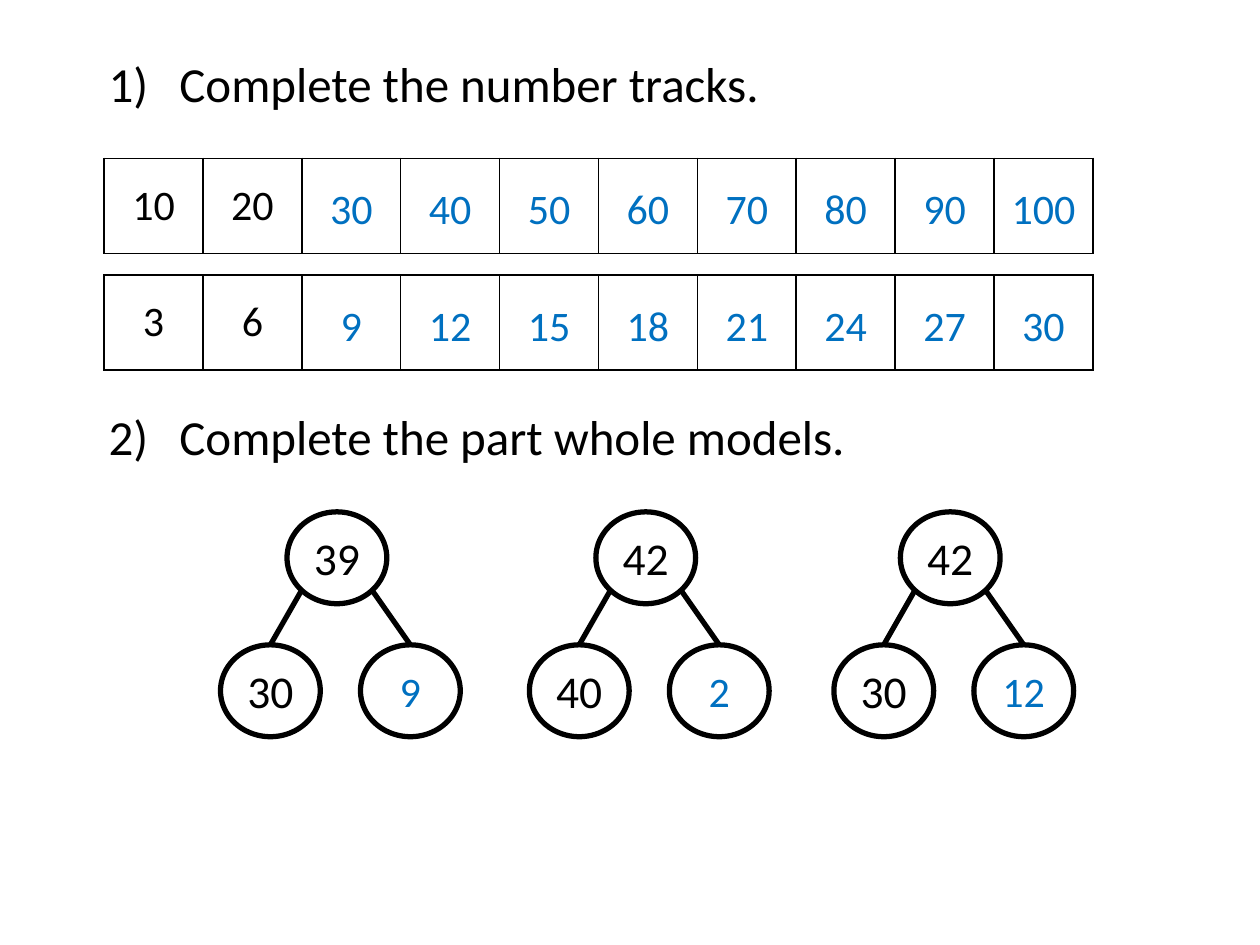
from dataclasses import dataclass
from math import sqrt
from lxml.etree import SubElement as Sub
from pptx import Presentation
from pptx.dml.color import RGBColor as RGB
from pptx.enum.shapes import MSO_CONNECTOR as Link, MSO_SHAPE as Kind
from pptx.enum.text import MSO_ANCHOR as Anchor, PP_ALIGN as Align
from pptx.oxml.ns import qn
from pptx.util import Pt


@dataclass(frozen=True)
class Theme:
    """Colours, font and type sizes."""
    font: str = "Calibri"
    ink: RGB = RGB(0, 0, 0)
    paper: RGB = RGB(255, 255, 255)
    blue: RGB = RGB(0, 0x70, 0xC0)
    head: int = 28
    whole: int = 26
    cell: int = 24


look = Theme()


def write(frame, text, size, color, align=Align.CENTER):
    """Put one line of styled text in a frame."""
    frame.word_wrap = True
    frame.vertical_anchor = Anchor.MIDDLE
    para = frame.paragraphs[0]
    para.text = text
    para.alignment = align
    font = para.runs[0].font
    font.name, font.size, font.color.rgb = look.font, Pt(size), color


def clear(frame):
    """Drop the inner margins of a frame."""
    frame.margin_left = frame.margin_right = 0
    frame.margin_top = frame.margin_bottom = 0


def question(slide, left, top, wide, high, num, text):
    """Draw a numbered question."""
    frame = slide.shapes.add_textbox(Pt(left), Pt(top), Pt(wide), Pt(high)).text_frame
    props = frame.paragraphs[0]._p.get_or_add_pPr()
    props.set("marL", str(Pt(40.5)))
    props.set("indent", str(-Pt(40.5)))
    Sub(props, qn("a:buFont"), typeface="+mj-lt")
    Sub(props, qn("a:buAutoNum"), type="arabicParenR", startAt=str(num))
    write(frame, text, look.head, look.ink, Align.LEFT)


def border(cell):
    """Give a cell thin black edges and no fill."""
    props = cell._tc.get_or_add_tcPr()
    for side in ("lnL", "lnR", "lnT", "lnB"):
        edge = Sub(props, qn(f"a:{side}"), w=str(Pt(1)))
        fill = Sub(edge, qn("a:solidFill"))
        Sub(fill, qn("a:srgbClr"), val=str(look.ink))
    cell.fill.background()


def track(slide, left, top, wide, high, step, given=2, count=10):
    """Draw a number track with its first values given and the rest answered."""
    table = slide.shapes.add_table(1, count, Pt(left), Pt(top), Pt(wide), Pt(high)).table
    table.first_row = table.horz_banding = False
    table.rows[0].height = Pt(high)
    pitch = wide / count
    for i in range(count):
        table.columns[i].width = Pt(pitch)
        cell = table.cell(0, i)
        border(cell)
        text = str(step * (i + 1))
        if i < given:
            cell.vertical_anchor = Anchor.MIDDLE
            write(cell.text_frame, text, look.cell, look.ink)
        else:
            box = slide.shapes.add_textbox(
                Pt(left + i * pitch), Pt(top + 1), Pt(pitch), Pt(high))
            clear(box.text_frame)
            write(box.text_frame, text, look.cell, look.blue)


def ring(group, left, top, wide, high, text, size, color):
    """Draw a circle that holds a number."""
    oval = group.shapes.add_shape(Kind.OVAL, Pt(left), Pt(top), Pt(wide), Pt(high))
    oval.shadow.inherit = False
    oval.fill.solid()
    oval.fill.fore_color.rgb = look.paper
    oval.line.color.rgb, oval.line.width = look.ink, Pt(3)
    clear(oval.text_frame)
    write(oval.text_frame, text, size, color)
    return oval


def model(slide, left, top, wide, high, whole, part):
    """Draw a part-whole model with one part answered."""
    group = slide.shapes.add_group_shape()
    rw, rh = 57, 52.5
    wx, low = left + 38, top + high - rh
    ring(group, wx, top, rw, rh, str(whole), look.whole, look.ink)
    parts = (
        (left, -1, part, look.whole, look.ink),
        (left + wide - rw, 1, whole - part, look.cell, look.blue),
    )
    for x, way, value, size, color in parts:
        oval = ring(group, x, low, rw, rh, str(value), size, color)
        sx = wx + rw / 2 * (1 + way / sqrt(2))
        sy = top + rh / 2 * (1 + 1 / sqrt(2))
        line = group.shapes.add_connector(
            Link.STRAIGHT, Pt(sx), Pt(sy), Pt(x + rw / 2), Pt(low))
        line.end_connect(oval, 0)
        line.line.color.rgb, line.line.width = look.ink, Pt(3)
        Sub(line._element.spPr, qn("a:effectLst"))


def main():
    """Build the worksheet slide."""
    deck = Presentation()
    deck.slide_width, deck.slide_height = Pt(720), Pt(540)
    slide = deck.slides.add_slide(deck.slide_layouts[6])
    question(slide, 55, 26.5, 590, 42, 1, "Complete the number tracks.")
    question(slide, 55, 228, 590, 42, 2, "Complete the part whole models.")
    for top, step in ((90.5, 10), (157, 3)):
        track(slide, 59.5, top, 565, 54.5, step)
    for left, whole, part in ((126, 39, 30), (302.5, 42, 40), (476.5, 42, 30)):
        model(slide, left, 292.5, 137, 128.5, whole, part)
    deck.save("out.pptx")


if __name__ == "__main__":
    main()
